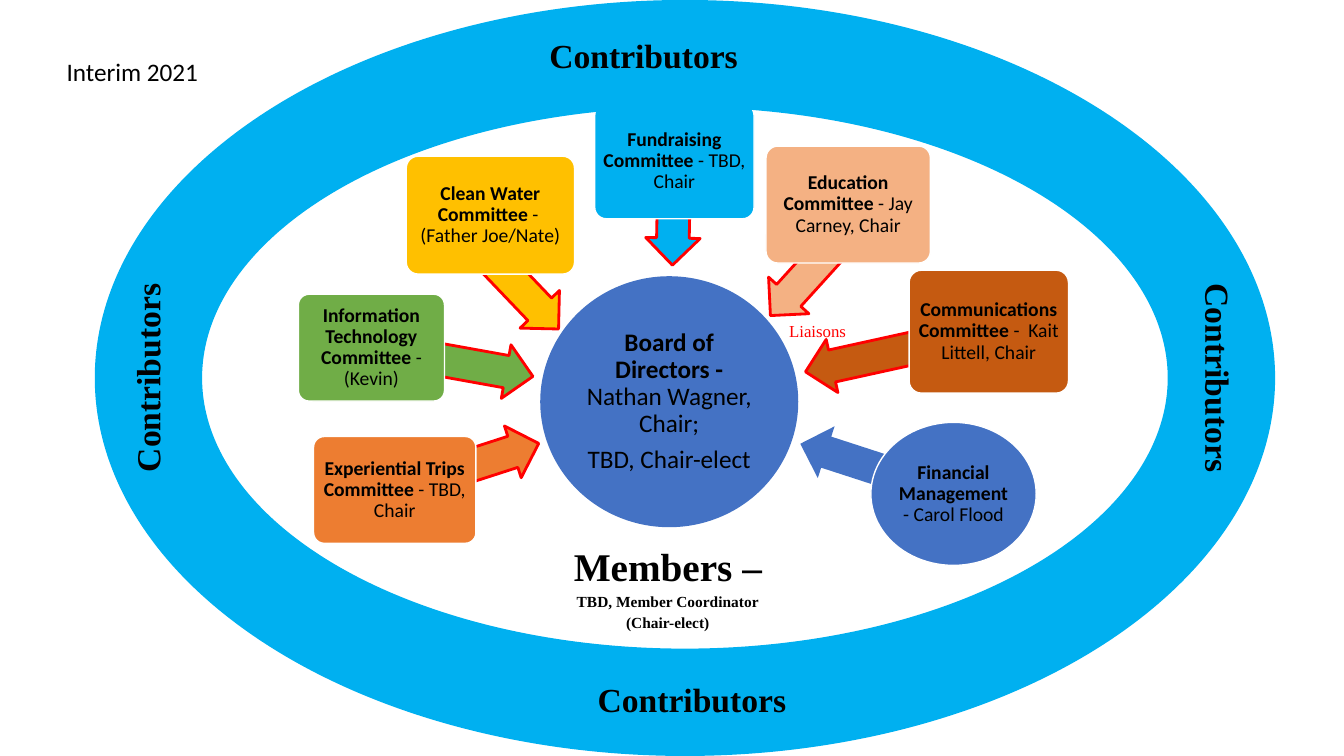
from pptx import Presentation
from pptx.dml.color import RGBColor
from pptx.enum.shapes import MSO_SHAPE
from pptx.enum.text import MSO_ANCHOR, MSO_AUTO_SIZE, PP_ALIGN
from pptx.util import Pt

OVAL, ROUNDED = MSO_SHAPE.OVAL, MSO_SHAPE.ROUNDED_RECTANGLE
ARROW, DONUT = MSO_SHAPE.LEFT_ARROW, MSO_SHAPE.DONUT
LEFT, CENTER = PP_ALIGN.LEFT, PP_ALIGN.CENTER
MIDDLE, NO_RESIZE = MSO_ANCHOR.MIDDLE, MSO_AUTO_SIZE.NONE
SANS, SERIF = "Calibri", "Times New Roman"
ARROW_HEIGHT = 38.9
COLORS = {
    "black": "000000", "white": "FFFFFF", "red": "FF0000", "blue": "4472C4",
    "orange": "ED7D31", "green": "70AD47", "gold": "FFC000", "sky": "00B0F0",
    "peach": "F4B183", "rust": "C55A11",
}

# box, shape, colour, arrow line, name, people, arrow (centre offset, length, angle)
COMMITTEES = [
    ((224, 311.8, 116, 76.3), ROUNDED, "orange", "red",
     "Experiential Trips Committee ", "- TBD, Chair", (51.4, -16.6, 108, 162.1)),
    ((213.1, 210.2, 104.4, 76.3), ROUNDED, "green", "red",
     "Information Technology Committee ", "- (Kevin)", (57.6, 10.1, 117.4, 190.2)),
    ((290.2, 111.6, 120.2, 84.2), ROUNDED, "gold", "red",
     "Clean Water Committee ", "-  (Father Joe/Nate)", (21.6, 52.9, 78.5, 226.3)),
    ((424.8, 74.2, 113.8, 82.1), ROUNDED, "sky", "red",
     "Fundraising Committee ", "- TBD, Chair", (-0.7, 38.9, 70.6, 271.1)),
    ((547.2, 104.4, 117.4, 83.5), ROUNDED, "peach", "red",
     "Education Committee ", "- Jay Carney, Chair", (-24.1, 44.6, 93.6, 312.2)),
    ((649.4, 193, 113.8, 87.8), ROUNDED, "rust", "red",
     "Communications Committee ", "-  Kait Littell, Chair", (-65.9, 14.4, 133.2, 347.6)),
    ((622.1, 301.7, 118.1, 102.2), OVAL, "blue", None,
     "Financial Management ", "- Carol Flood", (-54.7, -18, 115.2, 18)),
]
CONTRIBUTORS = [
    ((382.3, 17.3, 154.8, 38.9), None),
    ((411.8, 477.4, 164.9, 41.8), None),
    ((82.8, 188.6, 48.2, 162.7), "vert270"),
    ((848.2, 188.6, 44.6, 162.7), "vert"),
]


def rgb(name):
    return RGBColor.from_string(COLORS[name])


def set_font(font, family, size, color="black", bold=False):
    font.name, font.size, font.bold = family, Pt(size), bold
    font.color.rgb = rgb(color)


def add_solid(page, kind, box, fill, line=None, width=1, adjustments=()):
    solid = page.shapes.add_shape(kind, *map(Pt, box))
    solid.shadow.inherit = False
    solid.fill.solid()
    solid.fill.fore_color.rgb = rgb(fill)
    if line:
        solid.line.color.rgb = rgb(line)
        solid.line.width = Pt(width)
    else:
        solid.line.fill.background()
    for index, value in enumerate(adjustments):
        solid.adjustments[index] = value
    return solid


def fill_node(shape, paragraphs, size, inset):
    """Write paragraphs of (text, bold) spans, centred in the shape."""
    frame = shape.text_frame
    frame.word_wrap = True
    frame.vertical_anchor = MIDDLE
    frame.margin_left = frame.margin_right = Pt(inset)
    frame.margin_top = frame.margin_bottom = Pt(inset)
    for index, spans in enumerate(paragraphs):
        para = frame.add_paragraph() if index else frame.paragraphs[0]
        para.alignment = CENTER
        para.line_spacing = 0.9
        para.space_after = Pt(6)
        for text, bold in spans:
            span = para.add_run()
            span.text = text
            set_font(span.font, SANS, size, bold=bold)


def add_label(page, box, lines, color="black", bold=True, align=CENTER, after=10, turn=None):
    """Add serif lines of (text, size); turn is a vertical text direction."""
    label = page.shapes.add_textbox(*map(Pt, box))
    frame = label.text_frame
    frame.word_wrap = True
    if turn:
        label.element.txBody.bodyPr.set("vert", turn)
    for index, (text, size) in enumerate(lines):
        para = frame.add_paragraph() if index else frame.paragraphs[0]
        para.text = text
        para.alignment = align
        para.line_spacing = 1.15
        para.space_after = Pt(after)
        set_font(para.font, SERIF, size, color, bold)


def add_title(page, box):
    title = page.shapes.title
    title.left, title.top, title.width, title.height = map(Pt, box)
    frame = title.text_frame
    frame.auto_size = NO_RESIZE
    frame.vertical_anchor = MIDDLE
    para = frame.paragraphs[0]
    para.text = "Interim 2021"
    para.alignment = LEFT
    set_font(para.font, SANS, 18)


def add_board(page, box):
    board = add_solid(page, OVAL, box, "blue")
    fill_node(board, [
        [("Board of Directors -", True), (" Nathan Wagner, Chair;", False)],
        [("TBD, Chair-elect", False)],
    ], 18, 0.9)


def add_committee(page, box, kind, color, arrow_line, name, people, arrow):
    left, top, width, height = box
    across, down, length, angle = arrow
    arrow_box = (left + width / 2 + across - length / 2,
                 top + height / 2 + down - ARROW_HEIGHT / 2, length, ARROW_HEIGHT)
    pointer = add_solid(page, ARROW, arrow_box, color, arrow_line, 2, (0.6, 0.5))
    pointer.rotation = angle
    corners = (0.1,) if kind == ROUNDED else ()
    node = add_solid(page, kind, box, color, "white", 1, corners)
    fill_node(node, [[(name, True), (people, False)]], 14, 2.4)


def add_ring(page, box):
    add_solid(page, DONUT, box, "sky", adjustments=(0.142,))
    for label_box, turn in CONTRIBUTORS:
        add_label(page, label_box, [("Contributors", 24)], turn=turn)


def main():
    deck = Presentation()
    deck.slide_width, deck.slide_height = Pt(960), Pt(540)
    page = deck.slides.add_slide(deck.slide_layouts[5])
    add_title(page, (40.3, 36.7, 109.4, 29))
    add_board(page, (385.9, 197.3, 184.3, 179.3))
    for committee in COMMITTEES:
        add_committee(page, *committee)
    add_ring(page, (67.7, 0, 843.1, 540))
    add_label(page, (399.6, 378.7, 154.8, 70.6), [
        ("Members –", 28), ("TBD, Member Coordinator", 11), ("(Chair-elect)", 11),
    ], after=0)
    add_label(page, (556.6, 223.2, 57.6, 23), [("Liaisons", 12)], "red", False, LEFT)
    deck.save("out.pptx")


if __name__ == "__main__":
    main()
